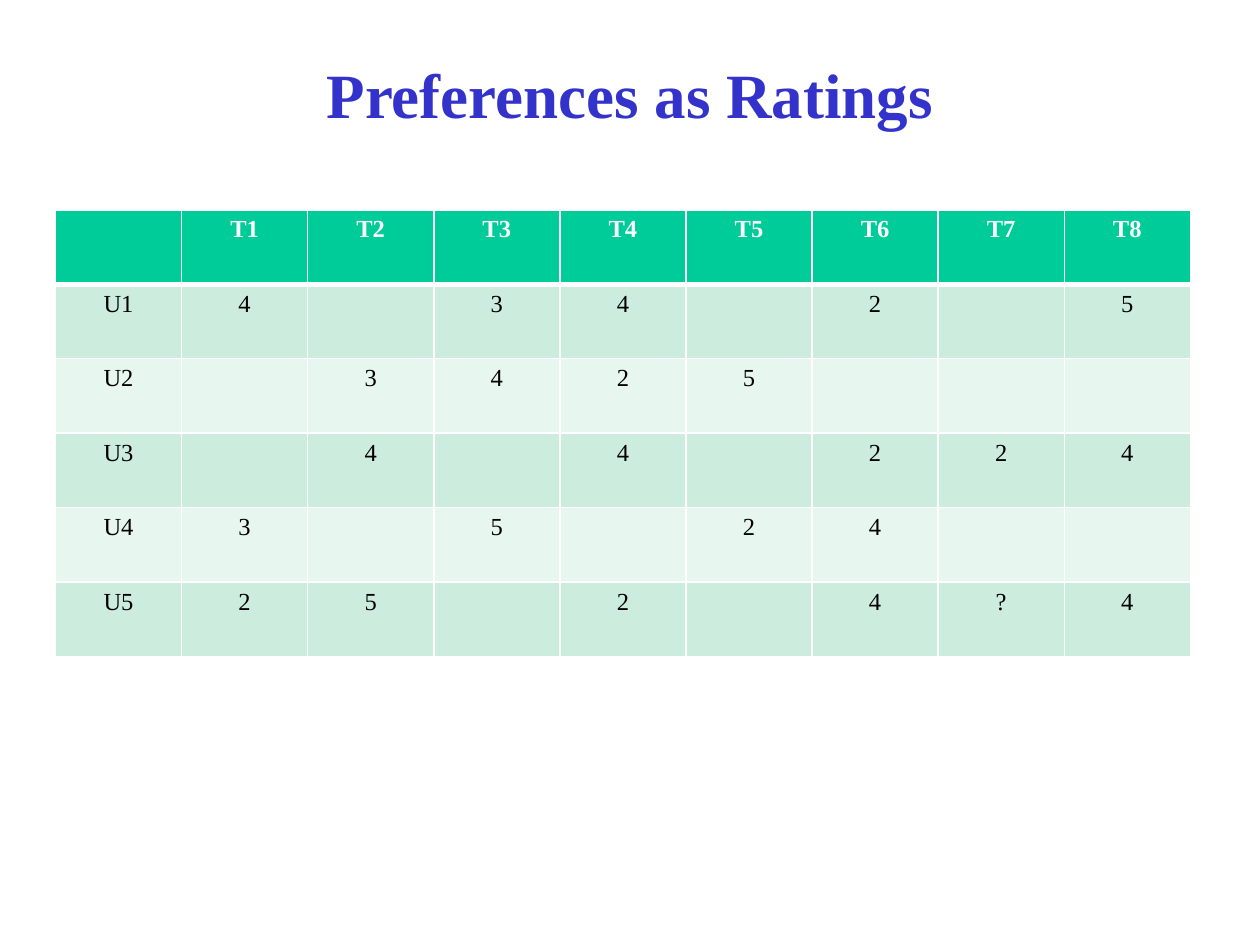
import pptx
import pptx.dml.color
import pptx.enum.text
import pptx.oxml.ns
import pptx.util
from lxml import etree

WIDE, HIGH = pptx.util.Inches(10), pptx.util.Inches(7.5)
FONT = "Times New Roman"
HUES = {
    "title": "3333CC",
    "head": "00CC99",
    "odd": "CCECDE",
    "even": "E7F6EF",
    "line": "FFFFFF",
    "light": "FFFFFF",
    "dark": "000000",
}
RATINGS = [
    ["", "T1", "T2", "T3", "T4", "T5", "T6", "T7", "T8"],
    ["U1", "4", "", "3", "4", "", "2", "", "5"],
    ["U2", "", "3", "4", "2", "5", "", "", ""],
    ["U3", "", "4", "", "4", "", "2", "2", "4"],
    ["U4", "3", "", "5", "", "2", "4", "", ""],
    ["U5", "2", "5", "", "2", "", "4", "?", "4"],
]


def color(name):
    return pptx.dml.color.RGBColor.from_string(HUES[name])


def write(frame, text, size, hue, bold):
    frame.text = text
    para = frame.paragraphs[0]
    para.alignment = pptx.enum.text.PP_ALIGN.CENTER
    for run in para.runs:
        run.font.name = FONT
        run.font.size = pptx.util.Pt(size)
        run.font.bold = bold
        run.font.color.rgb = color(hue)


def border(cell, widths):
    """Draw cell edges; widths maps the sides L, R, T, B to points."""
    props = cell._tc.get_or_add_tcPr()
    for side, width in widths.items():
        line = etree.SubElement(props, pptx.oxml.ns.qn(f"a:ln{side}"),
                                w=str(pptx.util.Pt(width)))
        fill = etree.SubElement(line, pptx.oxml.ns.qn("a:solidFill"))
        etree.SubElement(fill, pptx.oxml.ns.qn("a:srgbClr"), val=HUES["line"])


def add_title(slide, box, text):
    title = slide.shapes.title
    title.left, title.top, title.width, title.height = box
    title.text_frame.vertical_anchor = pptx.enum.text.MSO_ANCHOR.MIDDLE
    write(title.text_frame, text, 36, "title", True)


def add_grid(slide, box, data):
    left, top, width, height = box
    table = slide.shapes.add_table(len(data), len(data[0]), *box).table
    for col in table.columns:
        col.width = width // len(data[0])
    for r, values in enumerate(data):
        table.rows[r].height = height // len(data)
        head = r == 0
        band = "head" if head else "odd" if r % 2 else "even"
        edges = {"L": 1, "R": 1, "T": 3 if r == 1 else 1, "B": 3 if head else 1}
        for c, value in enumerate(values):
            cell = table.cell(r, c)
            write(cell.text_frame, value, 14, "light" if head else "dark", head)
            border(cell, edges)
            cell.fill.solid()
            cell.fill.fore_color.rgb = color(band)


def share(left, top, width, height):
    """Turn shares of the slide's size into a box."""
    return (int(left * WIDE), int(top * HIGH),
            int(width * WIDE), int(height * HIGH))


def main():
    deck = pptx.Presentation()
    deck.slide_width, deck.slide_height = WIDE, HIGH
    slide = deck.slides.add_slide(deck.slide_layouts.get_by_name("Title Only"))
    add_title(slide, share(0.075, 0.044, 0.85, 0.11), "Preferences as Ratings")
    add_grid(slide, share(0.044, 0.222, 0.901, 0.473), RATINGS)
    deck.save("out.pptx")


if __name__ == "__main__":
    main()
